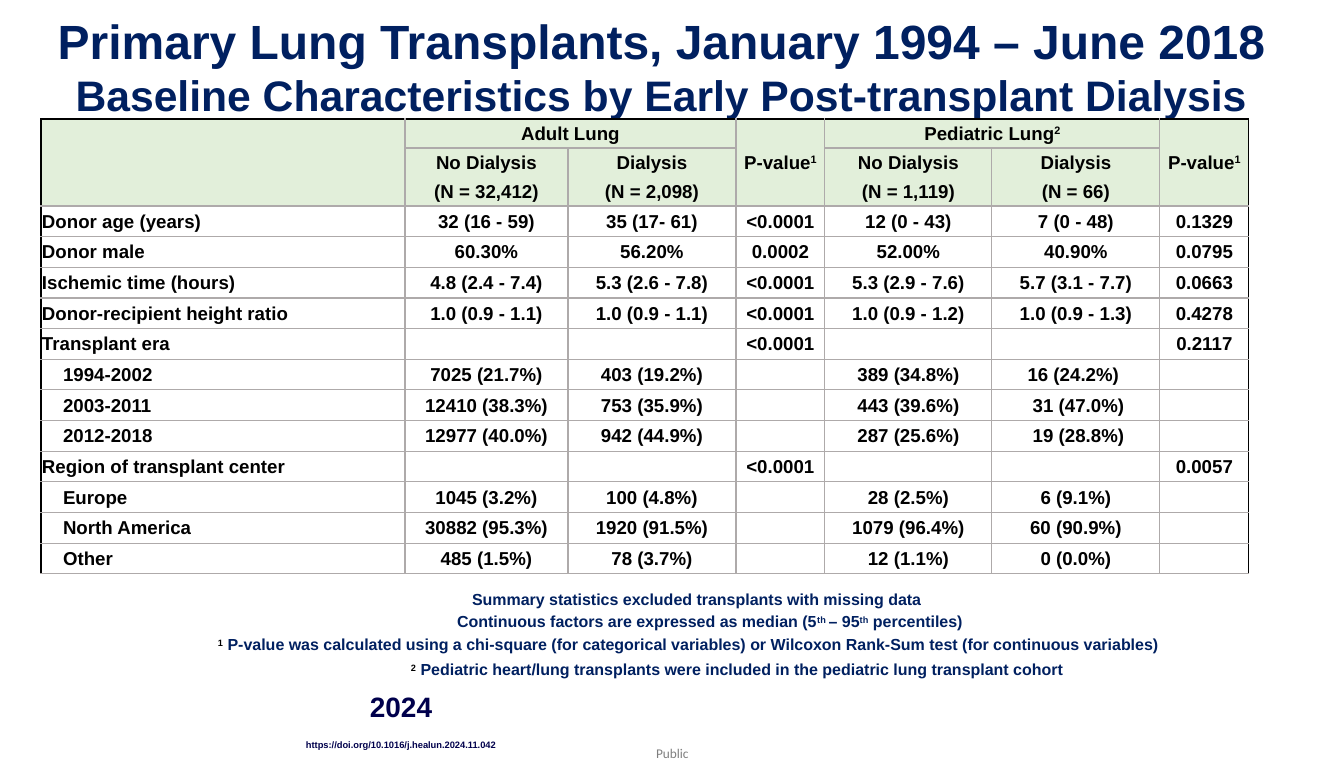
"""Build the slide on early post-transplant dialysis in lung recipients."""
from dataclasses import dataclass

from lxml import etree
from pptx import Presentation
from pptx.dml.color import RGBColor
from pptx.enum.shapes import MSO_SHAPE
from pptx.enum.text import MSO_ANCHOR, PP_ALIGN
from pptx.oxml.ns import qn
from pptx.slide import Slide
from pptx.table import Table, _Cell
from pptx.text.text import TextFrame, _Paragraph
from pptx.util import Pt

LEFT, CENTER = PP_ALIGN.LEFT, PP_ALIGN.CENTER
TOP, MIDDLE = MSO_ANCHOR.TOP, MSO_ANCHOR.MIDDLE
RECTANGLE = MSO_SHAPE.RECTANGLE
EMU_PER_PX = 9525
NAVY, DARK_NAVY, BLACK, GRAY = "002060", "00004C", "000000", "7F7F7F"
GRID, HEADER_GREEN, WHITE = "AEAAAA", "E2EFDA", "FFFFFF"
HEADER_ROWS = 3
HEADER_HEIGHT, BODY_HEIGHT = 87, 368
COLUMN_WIDTHS = (364, 163, 168, 89, 167, 168, 89)
TALL_COLUMNS = (0, 3, 6)
PAIR_COLUMNS = (1, 4)
INDENT = 21


@dataclass(frozen=True)
class Span:
    """A stretch of text in one format."""
    text: str
    size: int = 14
    color: str = BLACK
    raised: bool = False
    bold: bool = True
    font: str = "Arial"


@dataclass(frozen=True)
class Note:
    """A free text with its box and insets in px."""
    box: tuple[int, int, int, int]
    spans: tuple[Span, ...]
    align: PP_ALIGN = LEFT
    anchor: MSO_ANCHOR = TOP
    insets: tuple[int, int, int, int] = (10, 5, 10, 5)
    wrap: bool = True
    outline: str = ""


@dataclass(frozen=True)
class Characteristic:
    """A body row of the table."""
    label: str
    values: tuple[str, ...]
    level: int = 0


P_VALUE = (Span("P-value"), Span("1", raised=True))
HEADERS = {
    (0, 1): (Span("Adult Lung"),),
    (0, 3): P_VALUE,
    (0, 4): (Span("Pediatric Lung"), Span("2", raised=True)),
    (0, 6): P_VALUE,
    (1, 1): (Span("No Dialysis"),),
    (1, 2): (Span("Dialysis"),),
    (1, 4): (Span("No Dialysis"),),
    (1, 5): (Span("Dialysis"),),
    (2, 1): (Span("(N = 32,412)"),),
    (2, 2): (Span("(N = 2,098)"),),
    (2, 4): (Span("(N = 1,119)"),),
    (2, 5): (Span("(N = 66)"),),
}
CHARACTERISTICS = (
    Characteristic("Donor age (years)", ("32 (16 - 59)", "35 (17- 61)", "<0.0001", "12 (0 - 43)", "7 (0 - 48)", "0.1329")),
    Characteristic("Donor male", ("60.30%", "56.20%", "0.0002", "52.00%", "40.90%", "0.0795")),
    Characteristic("Ischemic time (hours)", ("4.8 (2.4 - 7.4)", "5.3 (2.6 - 7.8)", "<0.0001", "5.3 (2.9 - 7.6)", "5.7 (3.1 - 7.7)", "0.0663")),
    Characteristic("Donor-recipient height ratio", ("1.0 (0.9 - 1.1)", "1.0 (0.9 - 1.1)", "<0.0001", "1.0 (0.9 - 1.2)", "1.0 (0.9 - 1.3)", "0.4278")),
    Characteristic("Transplant era", ("", "", "<0.0001", "", "", "0.2117")),
    Characteristic("1994-2002", ("7025 (21.7%)", "403 (19.2%)", "", "389 (34.8%)", "16 (24.2%) ", ""), 1),
    Characteristic("2003-2011", ("12410 (38.3%)", "753 (35.9%)", "", "443 (39.6%)", " 31 (47.0%)", ""), 1),
    Characteristic("2012-2018", ("12977 (40.0%)", "942 (44.9%)", "", "287 (25.6%)", " 19 (28.8%)", ""), 1),
    Characteristic("Region of transplant center", ("", "", "<0.0001", "", "", "0.0057")),
    Characteristic("Europe", ("1045 (3.2%)", "100 (4.8%)", "", "28 (2.5%)", "6 (9.1%)", ""), 1),
    Characteristic("North America", ("30882 (95.3%)", "1920 (91.5%)", "", "1079 (96.4%)", "60 (90.9%)", ""), 1),
    Characteristic("Other", ("485 (1.5%)", "78 (3.7%)", "", "12 (1.1%)", "0 (0.0%)", ""), 1),
)
NOTES = (
    Note((656, 745, 36, 16), (Span("Public", 10, GRAY, bold=False, font="Calibri"),), insets=(0, 0, 0, 0), wrap=False),
    Note((307, 685, 188, 43), (Span("2024", 21, DARK_NAVY),), CENTER),
    Note((303, 734, 203, 21), (Span("https://doi.org/10.1016/j.healun.2024.11.042", 7, DARK_NAVY),),
         anchor=MIDDLE, insets=(3, 5, 0, 5), outline=WHITE),
    Note((350, 607, 720, 29), (
        Span("Continuous factors are expressed as median (5", 12, NAVY), Span("th ", 12, NAVY, True),
        Span("– 95", 12, NAVY), Span("th", 12, NAVY, True), Span(" percentiles)", 12, NAVY)), CENTER),
    Note((462, 585, 682, 29), (Span("Summary statistics excluded transplants with missing data", 12, NAVY),)),
    Note((208, 630, 1008, 29), (
        Span("1", 12, raised=True),
        Span(" P-value was calculated using a chi-square (for categorical variables) or Wilcoxon Rank-Sum test (for continuous variables)", 12, NAVY))),
    Note((401, 655, 734, 29), (
        Span("2", 12, raised=True),
        Span(" Pediatric heart/lung transplants were included in the pediatric lung transplant cohort", 12, NAVY))),
)


def px(length: int) -> int:
    return length * EMU_PER_PX


def rgb(color: str) -> RGBColor:
    return RGBColor.from_string(color)


def add_span(paragraph: _Paragraph, span: Span) -> None:
    run = paragraph.add_run()
    run.text = span.text
    run.font.name, run.font.size, run.font.bold = span.font, Pt(span.size), span.bold
    run.font.color.rgb = rgb(span.color)
    if span.raised:
        run._r.get_or_add_rPr().set("baseline", "30000")


def set_insets(target: TextFrame | _Cell, insets: tuple[int, int, int, int]) -> None:
    target.margin_left, target.margin_top, target.margin_right, target.margin_bottom = map(px, insets)


def add_title(slide: Slide) -> None:
    title = slide.shapes.title
    title.left, title.top, title.width, title.height = map(px, (16, 2, 1292, 128))
    title.text_frame.vertical_anchor = MIDDLE
    paragraph = title.text_frame.paragraphs[0]
    paragraph.alignment = CENTER
    add_span(paragraph, Span("Primary Lung Transplants, January 1994 – June 2018", 36, NAVY))
    paragraph.add_line_break()
    break_format = etree.SubElement(paragraph._p[-1], qn("a:rPr"), sz="4400")
    etree.SubElement(break_format, qn("a:latin"), typeface="Arial")
    add_span(paragraph, Span("Baseline Characteristics by Early Post-transplant Dialysis", 32, NAVY))


def add_note(slide: Slide, note: Note) -> None:
    box = map(px, note.box)
    if note.outline:
        shape = slide.shapes.add_shape(RECTANGLE, *box)
        shape.shadow.inherit = False
        shape.fill.background()
        shape.line.color.rgb, shape.line.width = rgb(note.outline), Pt(0.75)
    else:
        shape = slide.shapes.add_textbox(*box)
    frame = shape.text_frame
    frame.word_wrap, frame.vertical_anchor = note.wrap, note.anchor
    set_insets(frame, note.insets)
    frame.paragraphs[0].alignment = note.align
    for span in note.spans:
        add_span(frame.paragraphs[0], span)


def add_borders(cell: _Cell, row: int, column: int) -> None:
    tall = column in TALL_COLUMNS
    open_sides = {
        "L": row == 0 and column - 1 in PAIR_COLUMNS,
        "R": row == 0 and column in PAIR_COLUMNS,
        "T": row == 2 or (row == 1 and tall),
        "B": row == 1 or (row == 0 and tall),
    }
    outer = {"L": column == 0, "R": column == len(COLUMN_WIDTHS) - 1, "T": row == 0, "B": False}
    for side, is_open in open_sides.items():
        line = etree.SubElement(cell._tc.get_or_add_tcPr(), qn(f"a:ln{side}"), w=str(Pt(1)))
        if is_open:
            etree.SubElement(line, qn("a:noFill"))
        else:
            fill = etree.SubElement(line, qn("a:solidFill"))
            etree.SubElement(fill, qn("a:srgbClr"), val=BLACK if outer[side] else GRID)


def fill_cell(table: Table, row: int, column: int, spans: tuple[Span, ...], level: int = 0) -> None:
    cell = table.cell(row, column)
    set_insets(cell, (1 + level * INDENT, 1, 1, 0))
    cell.vertical_anchor = MIDDLE
    add_borders(cell, row, column)
    cell.fill.solid()
    cell.fill.fore_color.rgb = rgb(HEADER_GREEN if row < HEADER_ROWS else WHITE)
    paragraph = cell.text_frame.paragraphs[0]
    paragraph.alignment = CENTER if column else LEFT
    for span in spans:
        add_span(paragraph, span)
    if not spans:
        etree.SubElement(paragraph._p, qn("a:endParaRPr"), sz="1400")


def add_characteristics_table(slide: Slide) -> None:
    row_count = HEADER_ROWS + len(CHARACTERISTICS)
    box = (41, 119, sum(COLUMN_WIDTHS), HEADER_HEIGHT + BODY_HEIGHT)
    table = slide.shapes.add_table(row_count, len(COLUMN_WIDTHS), *map(px, box)).table
    table.first_row = table.horz_banding = False
    for column, width in enumerate(COLUMN_WIDTHS):
        table.columns[column].width = px(width)
        for row in range(HEADER_ROWS):
            fill_cell(table, row, column, HEADERS.get((row, column), ()))
    for index, row in enumerate(table.rows):
        row.height = px(HEADER_HEIGHT) // HEADER_ROWS if index < HEADER_ROWS else px(BODY_HEIGHT) // len(CHARACTERISTICS)
    for row, item in enumerate(CHARACTERISTICS, HEADER_ROWS):
        for column, text in enumerate((item.label, *item.values)):
            fill_cell(table, row, column, (Span(text),) if text else (), 0 if column else item.level)
    for column in TALL_COLUMNS:
        table.cell(0, column).merge(table.cell(HEADER_ROWS - 1, column))
    for column in PAIR_COLUMNS:
        table.cell(0, column).merge(table.cell(0, column + 1))


def main() -> None:
    presentation = Presentation()
    presentation.slide_width, presentation.slide_height = px(1344), px(768)
    slide = presentation.slides.add_slide(presentation.slide_layouts[5])
    add_title(slide)
    for note in NOTES:
        add_note(slide, note)
    add_characteristics_table(slide)
    presentation.save("out.pptx")


if __name__ == "__main__":
    main()
